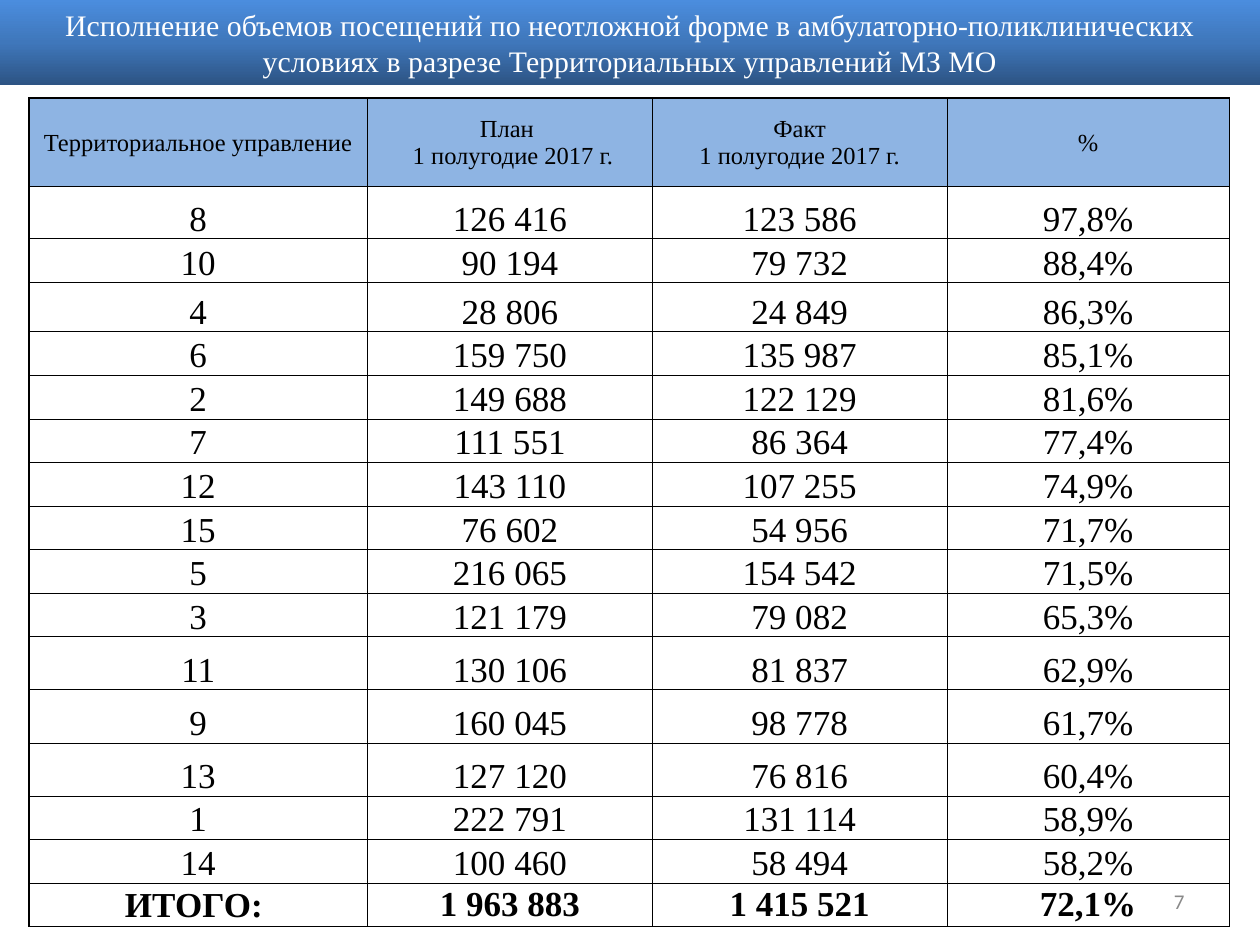
from copy import deepcopy

from lxml.etree import SubElement
from pptx import Presentation
from pptx.dml.color import RGBColor
from pptx.enum.shapes import MSO_SHAPE
from pptx.enum.text import MSO_ANCHOR, PP_ALIGN
from pptx.oxml.ns import qn
from pptx.util import Cm, Pt

BLACK = RGBColor(0x00, 0x00, 0x00)
WHITE = RGBColor(0xFF, 0xFF, 0xFF)
GREY = RGBColor(0x89, 0x89, 0x89)
SKY = RGBColor(0x8E, 0xB4, 0xE3)
SHADES = [RGBColor(0x2D, 0x54, 0x84), RGBColor(0x3F, 0x77, 0xBB),
          RGBColor(0x4B, 0x8D, 0xDE)]

SERIF = "Times New Roman"
TITLE = ("Исполнение объемов посещений по неотложной форме в "
         "амбулаторно-поликлинических условиях в разрезе "
         "Территориальных управлений МЗ МО")
ROWS = [
    ("Территориальное управление", "План \n 1 полугодие 2017 г.",
     "Факт\n1 полугодие 2017 г.", "%"),
    ("8", "126 416", "123 586", "97,8%"),
    ("10", "90 194", "79 732", "88,4%"),
    ("4", "28 806", "24 849", "86,3%"),
    ("6", "159 750", "135 987", "85,1%"),
    ("2", "149 688", "122 129", "81,6%"),
    ("7", "111 551", "86 364", "77,4%"),
    ("12", "143 110", "107 255", "74,9%"),
    ("15", "76 602", "54 956", "71,7%"),
    ("5", "216 065", "154 542", "71,5%"),
    ("3", "121 179", "79 082", "65,3%"),
    ("11", "130 106", "81 837", "62,9%"),
    ("9", "160 045", "98 778", "61,7%"),
    ("13", "127 120", "76 816", "60,4%"),
    ("1", "222 791", "131 114", "58,9%"),
    ("14", "100 460", "58 494", "58,2%"),
    ("ИТОГО: ", "1 963 883", "1 415 521", "72,1%"),
]
LAST = len(ROWS) - 1
WIDTHS = [6.83, 5.74, 5.94, 5.69]
BASE = 0.86
TALL = {0: 1.78, 1: 1.05, 2: 0.89, 3: 0.99, 11: 1.07, 12: 1.07, 13: 1.07}


def set_text(frame, text, align, color, **font):
    """Write one paragraph with the given font values."""
    para = frame.paragraphs[0]
    para.text = text
    para.alignment = align
    for run in para.runs:
        for key, value in font.items():
            setattr(run.font, key, value)
        run.font.color.rgb = color


def set_edges(cell, edges):
    """Draw cell borders; edges maps a side to its width in points."""
    props = cell._tc.get_or_add_tcPr()
    for side in "LRTB":
        line = SubElement(props, qn(f"a:ln{side}"), w=str(Pt(edges[side])))
        fill = SubElement(line, qn("a:solidFill"))
        SubElement(fill, qn("a:srgbClr"), val=str(BLACK))


def add_page(slide, text):
    box = slide.shapes.add_textbox(Cm(18.21), Cm(17.65), Cm(5.92), Cm(1.02))
    box.text_frame.word_wrap = True
    box.text_frame.vertical_anchor = MSO_ANCHOR.MIDDLE
    set_text(box.text_frame, text, PP_ALIGN.RIGHT, GREY,
             name="Calibri", size=Pt(12))


def fill_cell(cell, text, row, col):
    head, total = row == 0, row == LAST
    set_edges(cell, {"L": 0.5 if col else 1, "R": 0.5,
                     "T": 1 if head else 0.5, "B": 1 if total else 0.5})
    pad = Cm(0 if total and col else 0.03)
    middle = head or total
    style = {
        "margin_left": pad, "margin_right": pad,
        "margin_top": pad, "margin_bottom": Cm(0),
        "vertical_anchor": MSO_ANCHOR.MIDDLE if middle else MSO_ANCHOR.BOTTOM,
    }
    for key, value in style.items():
        setattr(cell, key, value)
    if head:
        cell.fill.solid()
        cell.fill.fore_color.rgb = SKY
    else:
        cell.fill.background()
    set_text(cell.text_frame, text, PP_ALIGN.CENTER, BLACK,
             name=SERIF, size=Pt(14 if head else 20), bold=total)


def add_grid(slide):
    highs = [TALL.get(row, BASE) for row in range(len(ROWS))]
    table = slide.shapes.add_table(
        len(ROWS), len(WIDTHS), Cm(0.58), Cm(1.98),
        Cm(sum(WIDTHS)), Cm(sum(highs))).table
    table.first_row = table.horz_banding = False
    for column, width in zip(table.columns, WIDTHS):
        column.width = Cm(width)
    for row, (high, texts) in enumerate(zip(highs, ROWS)):
        table.rows[row].height = Cm(high)
        for col, text in enumerate(texts):
            fill_cell(table.cell(row, col), text, row, col)


def add_title(slide, width):
    bar = slide.shapes.add_shape(MSO_SHAPE.RECTANGLE, 0, 0, width, Cm(1.71))
    bar.shadow.inherit = False
    bar.line.fill.background()
    # Three-stop gradient, dark at the bottom
    bar.fill.gradient()
    bar.fill.gradient_angle = 90
    first = bar.fill.gradient_stops[0]._gs
    first.addnext(deepcopy(first))
    for index, (stop, shade) in enumerate(zip(bar.fill.gradient_stops, SHADES)):
        stop.color.rgb = shade
        stop.position = index / 2
    frame = bar.text_frame
    frame.word_wrap = True
    frame.vertical_anchor = MSO_ANCHOR.MIDDLE
    set_text(frame, TITLE, PP_ALIGN.CENTER, WHITE, name=SERIF, size=Pt(17))


def main():
    deck = Presentation()
    deck.slide_width, deck.slide_height = Cm(25.4), Cm(19.05)
    slide = deck.slides.add_slide(deck.slide_layouts[6])
    add_page(slide, "7")
    add_grid(slide)
    add_title(slide, deck.slide_width)
    deck.save("out.pptx")


if __name__ == "__main__":
    main()
